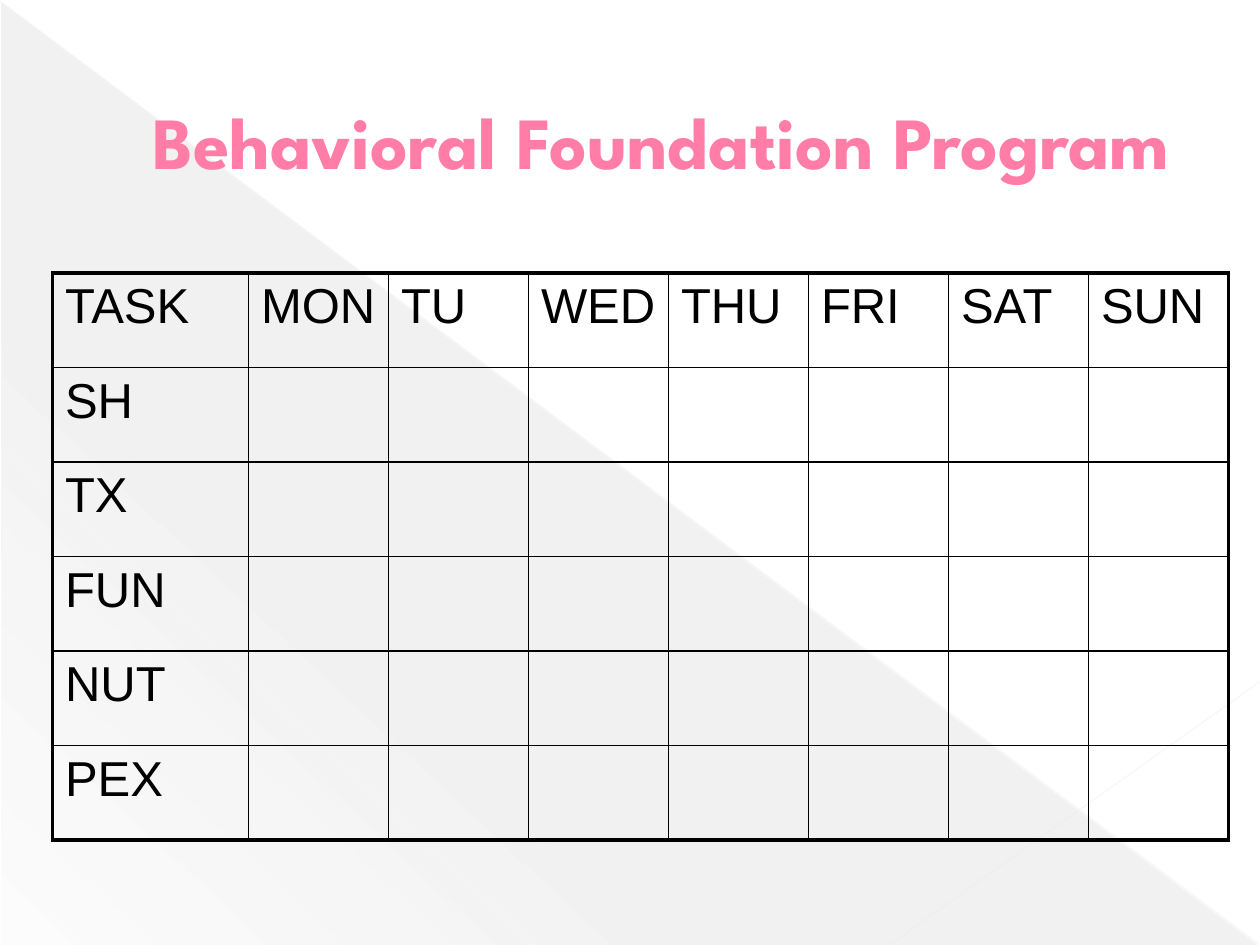
from lxml.etree import SubElement
from pptx import Presentation
from pptx.dml.color import RGBColor
from pptx.enum.shapes import MSO_CONNECTOR, MSO_SHAPE
from pptx.enum.text import MSO_ANCHOR, MSO_AUTO_SIZE, PP_ALIGN
from pptx.oxml import parse_xml
from pptx.oxml.ns import nsdecls, qn
from pptx.util import Pt

TITLE = "Behavioral Foundation Program"
DAYS = ["TASK", "MON", "TU", "WED", "THU", "FRI", "SAT", "SUN"]
TASKS = ["SH", "TX", "FUN", "NUT", "PEX"]

PINK = RGBColor(0xFF, 0x7D, 0xA7)
PLUM = RGBColor(0xB1, 0x27, 0x61)
BLACK = RGBColor(0, 0, 0)
GRAY = RGBColor(0x66, 0x66, 0x66)

DIAGONALS = [
    ((0, 0.72), (719.28, 539.28), RGBColor(0xE8, 0xE8, 0xE8), 0.39, 35),
    ((720, 389.52), (509.04, 539.28), RGBColor(0xEA, 0xEA, 0xEA), 0.47, 45),
]
GRADIENT_STOPS = [(0, 10), (70, 8), (100, 1)]
GRADIENT_ANGLE = 133

TABLE_LEFT, TABLE_TOP = 30, 156
TASK_WIDTH, DAY_WIDTH, ROW_HEIGHT = 112, 80, 54
OUTER_BORDER, INNER_BORDER = 2.25, 1


def solid_fill(color, opacity=100):
    return (f'<a:solidFill {nsdecls("a")}><a:srgbClr val="{color}">'
            f'<a:alpha val="{opacity * 1000}"/></a:srgbClr></a:solidFill>')


def add_triangle(slide):
    triangle = slide.shapes.add_shape(
        MSO_SHAPE.RIGHT_TRIANGLE, Pt(0.72), Pt(1.44), Pt(718.56), Pt(538.56))
    triangle.shadow.inherit = False
    triangle.line.fill.background()
    stops = "".join(
        f'<a:gs pos="{position * 1000}"><a:srgbClr val="{GRAY}">'
        f'<a:alpha val="{opacity * 1000}"/></a:srgbClr></a:gs>'
        for position, opacity in GRADIENT_STOPS)
    gradient = parse_xml(
        f'<a:gradFill {nsdecls("a")} rotWithShape="1"><a:gsLst>{stops}</a:gsLst>'
        f'<a:lin ang="{GRADIENT_ANGLE * 60000}" scaled="0"/></a:gradFill>')
    triangle._element.spPr.find(qn("a:prstGeom")).addnext(gradient)


def add_diagonal(slide, start, end, color, width, opacity):
    line = slide.shapes.add_connector(
        MSO_CONNECTOR.STRAIGHT, *map(Pt, start), *map(Pt, end))
    line.line.width = Pt(width)
    line.line._ln.append(parse_xml(solid_fill(color, opacity)))
    SubElement(line._element.spPr, qn("a:effectLst"))


def add_title(slide):
    title = slide.shapes.title
    title.left, title.top = Pt(41.76), Pt(23.76)
    title.width, title.height = Pt(635.76), Pt(112.32)
    frame = title.text_frame
    frame.word_wrap = True
    frame.auto_size = MSO_AUTO_SIZE.NONE
    frame.vertical_anchor = MSO_ANCHOR.MIDDLE
    frame.margin_right = 0
    paragraph = frame.paragraphs[0]
    paragraph.alignment = PP_ALIGN.LEFT
    properties = paragraph._p.get_or_add_pPr()
    properties.set("marL", str(Pt(38)))
    properties.set("indent", "0")
    run = paragraph.add_run()
    run.text = TITLE
    run.font.name = "League Spartan"
    run.font.size = Pt(42)
    run.font.bold = True
    run.font.color.rgb = PINK
    run._r.get_or_add_rPr().insert(0, parse_xml(
        f'<a:ln {nsdecls("a")} w="{Pt(0.5)}">{solid_fill(PLUM)}</a:ln>'))
    slide.shapes._spTree.append(title._element)


def set_borders(cell, widths):
    properties = cell._tc.get_or_add_tcPr()
    for index, (side, width) in enumerate(widths.items()):
        properties.insert(index, parse_xml(
            f'<a:ln{side} {nsdecls("a")} w="{Pt(width)}">{solid_fill(BLACK)}</a:ln{side}>'))


def add_schedule(slide):
    rows = [DAYS] + [[task] + [""] * (len(DAYS) - 1) for task in TASKS]
    widths = [TASK_WIDTH] + [DAY_WIDTH] * (len(DAYS) - 1)
    table = slide.shapes.add_table(
        len(rows), len(widths), Pt(TABLE_LEFT), Pt(TABLE_TOP),
        Pt(sum(widths)), Pt(ROW_HEIGHT * len(rows))).table
    table.first_row = table.horz_banding = False
    for column, width in zip(table.columns, widths):
        column.width = Pt(width)
    for row_index, row in enumerate(rows):
        for column_index, text in enumerate(row):
            cell = table.cell(row_index, column_index)
            cell.fill.background()
            edges = {"L": column_index == 0, "R": column_index == len(widths) - 1,
                     "T": row_index == 0, "B": row_index == len(rows) - 1}
            set_borders(cell, {side: OUTER_BORDER if outer else INNER_BORDER
                               for side, outer in edges.items()})
            cell.text = text
            font = cell.text_frame.paragraphs[0].font
            font.name = "Arial"
            font.size = Pt(28)
            font.color.rgb = BLACK


def main():
    presentation = Presentation()
    presentation.slide_width, presentation.slide_height = Pt(720), Pt(540)
    slide = presentation.slides.add_slide(presentation.slide_layouts[5])
    add_triangle(slide)
    for diagonal in DIAGONALS:
        add_diagonal(slide, *diagonal)
    add_title(slide)
    add_schedule(slide)
    presentation.save("out.pptx")


if __name__ == "__main__":
    main()
